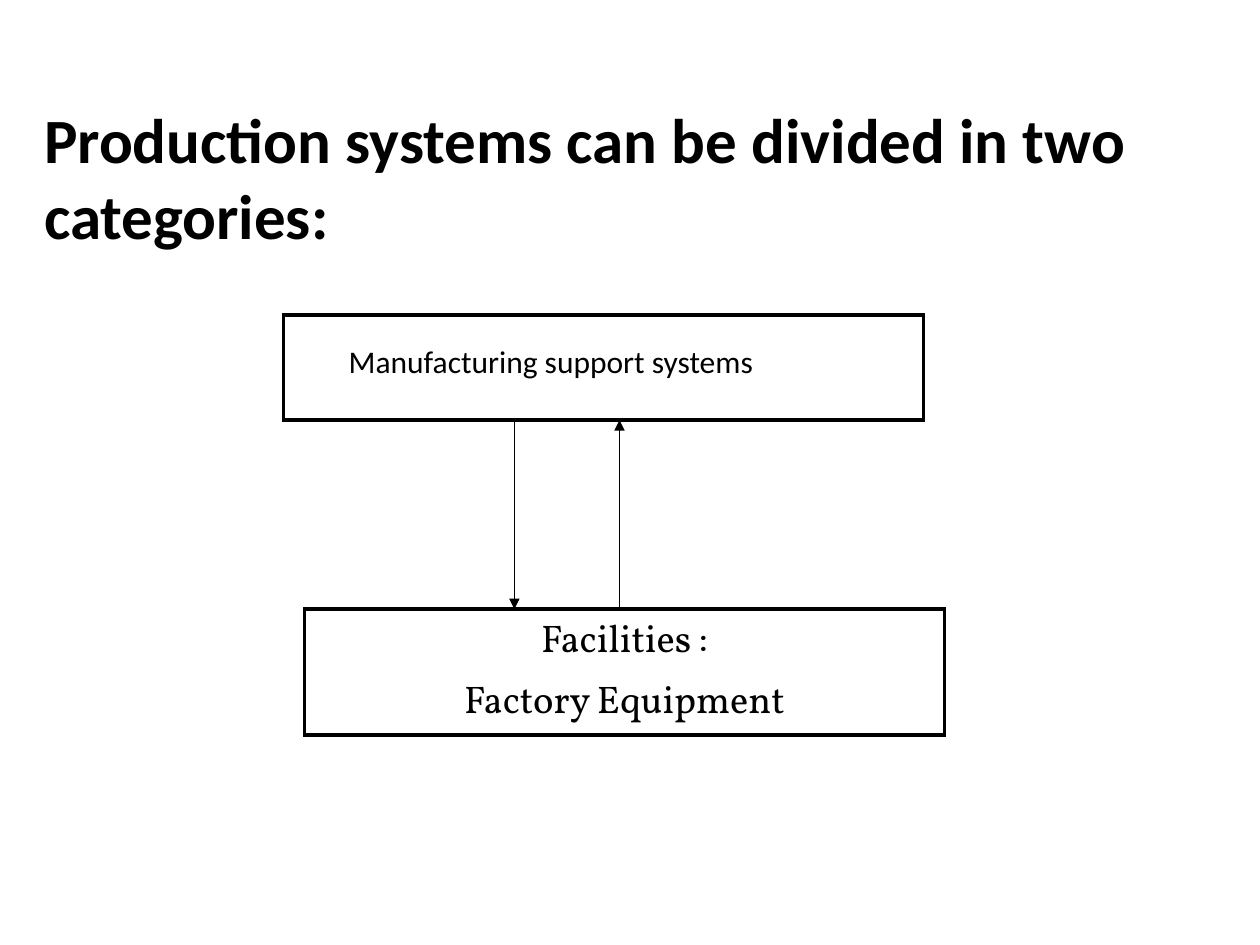
from lxml.etree import SubElement
from pptx import Presentation
from pptx.dml.color import RGBColor
from pptx.enum.shapes import MSO_CONNECTOR
from pptx.enum.text import PP_ALIGN
from pptx.oxml.ns import qn
from pptx.util import Cm, Pt

COLORS = {"ink": "000000"}


def write_text(frame, lines, font="Calibri", size=18, bold=False,
               align=PP_ALIGN.LEFT, gap=0):
    frame.word_wrap = True
    for index, line in enumerate(lines):
        paragraph = frame.paragraphs[0] if index == 0 else frame.add_paragraph()
        paragraph.alignment = align
        paragraph.space_before = Pt(gap if index else 0)
        run = paragraph.add_run()
        run.text = line
        run.font.name = font
        run.font.size = Pt(size)
        run.font.bold = bold
        run.font.color.rgb = RGBColor.from_string(COLORS["ink"])


def add_text(slide, box, text, **text_format):
    shape = slide.shapes.add_textbox(*map(Cm, box))
    write_text(shape.text_frame, [text], **text_format)


def add_framed_cell(slide, box, lines=(), **text_format):
    table = slide.shapes.add_table(1, 1, *map(Cm, box)).table
    table.first_row = False
    table.horz_banding = False
    cell = table.cell(0, 0)
    properties = cell._tc.get_or_add_tcPr()
    for side in ("lnL", "lnR", "lnT", "lnB"):
        border = SubElement(properties, qn(f"a:{side}"), w=str(Pt(2.25)))
        fill = SubElement(border, qn("a:solidFill"))
        SubElement(fill, qn("a:srgbClr"), val=COLORS["ink"])
    cell.fill.background()
    write_text(cell.text_frame, lines, **text_format)


def add_arrow(slide, x, start_y, end_y):
    arrow = slide.shapes.add_connector(
        MSO_CONNECTOR.STRAIGHT, Cm(x), Cm(start_y), Cm(x), Cm(end_y))
    arrow.line.width = Pt(0.75)
    arrow.line.color.rgb = RGBColor.from_string(COLORS["ink"])
    SubElement(arrow.line._get_or_add_ln(), qn("a:tailEnd"), type="triangle")
    SubElement(arrow._element.spPr, qn("a:effectLst"))


def add_title(slide, box):
    add_text(slide, box, "Production systems can be divided in two categories:",
             size=36, bold=True)


def add_diagram(slide, box):
    left, top, width, height = box
    frame_width = 12.9
    support_height, facilities_height = 2.12, 2.54
    support_bottom = top + support_height
    facilities_top = top + height - facilities_height
    add_text(slide, (left + 1.06, top + 0.43, 11.18, 1.27),
             "Manufacturing support systems")
    add_framed_cell(slide, (left, top, frame_width, support_height))
    add_framed_cell(
        slide,
        (left + width - frame_width, facilities_top, frame_width, facilities_height),
        ["Facilities :", "Factory Equipment"],
        font="Vollkorn", size=22, align=PP_ALIGN.CENTER, gap=4.4)
    add_arrow(slide, left + 4.65, support_bottom, facilities_top)
    add_arrow(slide, left + 6.77, facilities_top, support_bottom)


def main():
    presentation = Presentation()
    presentation.slide_width = Cm(25.4)
    presentation.slide_height = Cm(19.05)
    slide = presentation.slides.add_slide(presentation.slide_layouts[6])
    add_diagram(slide, (5.72, 6.35, 13.32, 8.47))
    add_title(slide, (0.64, 1.9, 22.86, 3.33))
    presentation.save("out.pptx")


if __name__ == "__main__":
    main()
